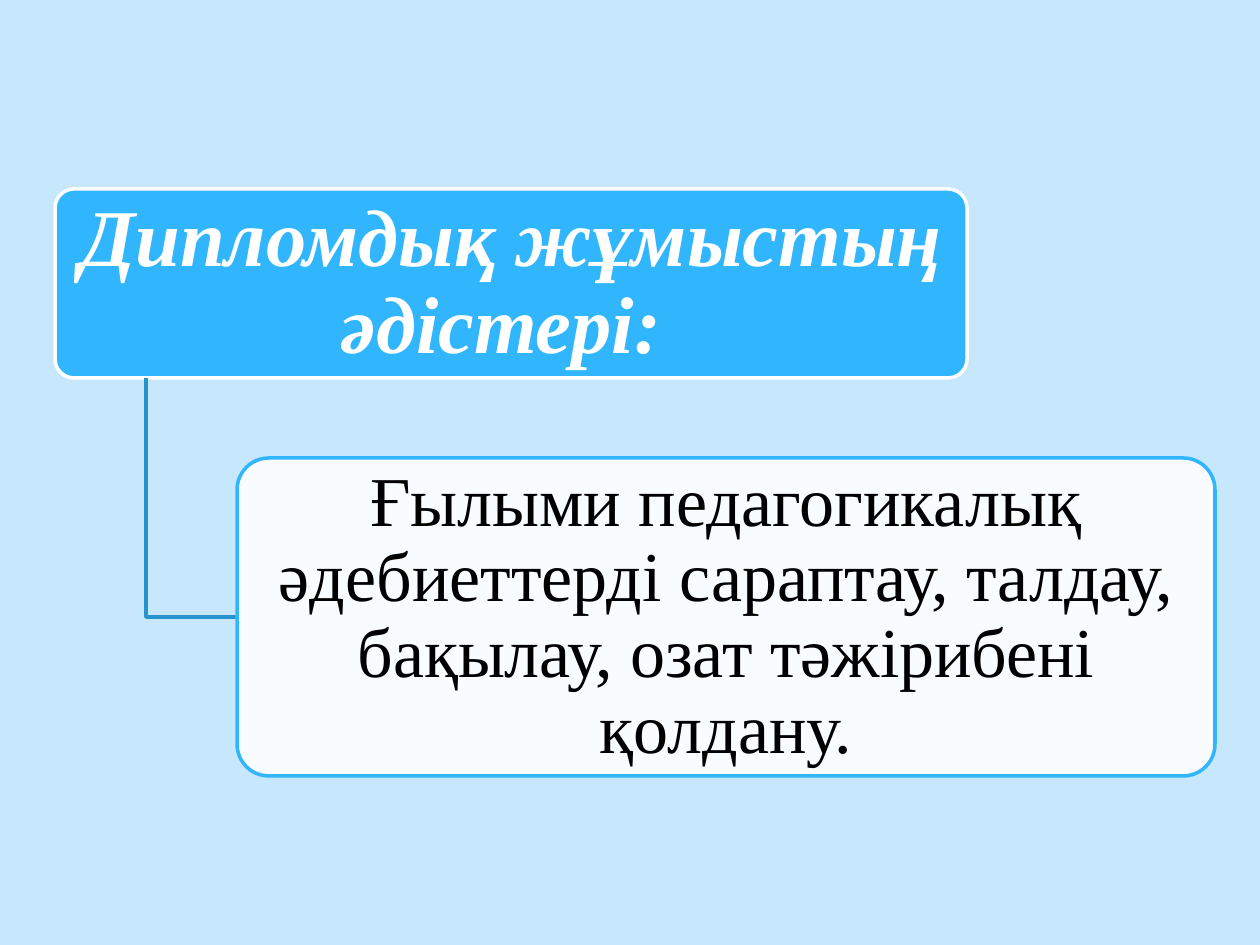
from lxml import etree
from pptx import Presentation
from pptx import util as u
from pptx.dml.color import RGBColor
from pptx.enum import shapes, text
from pptx.oxml.ns import qn

PX = 914400 / 126
SKY, BLUE, STEEL, WHITE, BLACK = "C6E7FC", "31B6FD", "2792CB", "FFFFFF", "000000"


def px(length):
    return u.Emu(round(length * PX))


def rgb(value):
    return RGBColor.from_string(value)


def set_line(shape, color):
    shape.line.color.rgb = rgb(color)
    shape.line.width = u.Pt(2)


def add_card(slide, left, top, width, height, fill, line, opacity=100):
    card = slide.shapes.add_shape(shapes.MSO_SHAPE.ROUNDED_RECTANGLE,
                                  px(left), px(top), px(width), px(height))
    card.adjustments[0] = 0.1
    card.shadow.inherit = False
    card.fill.solid()
    card.fill.fore_color.rgb = rgb(fill)
    if opacity < 100:
        color = card.fill._xPr.find(qn("a:solidFill"))[0]
        etree.SubElement(color, qn("a:alpha"), val=str(opacity * 1000))
    set_line(card, line)
    return card


def write(card, words, size, color, side, bold=False, italic=False):
    """Fill a card with centred text; side is the left and right inset."""
    frame = card.text_frame
    frame.word_wrap = True
    frame.vertical_anchor = text.MSO_ANCHOR.MIDDLE
    frame.margin_left = frame.margin_right = px(side)
    frame.margin_top = frame.margin_bottom = px(8)
    paragraph = frame.paragraphs[0]
    paragraph.alignment = text.PP_ALIGN.CENTER
    paragraph.line_spacing = 0.9
    run = paragraph.add_run()
    run.text = words
    font = run.font
    font.name, font.size = "Times New Roman", u.Pt(size)
    font.bold, font.italic = bold, italic
    font.color.rgb = rgb(color)


def add_branch(slide, points, color):
    """Draw an open bent line through the points."""
    builder = slide.shapes.build_freeform(*points[0], scale=PX)
    builder.add_line_segments(points[1:], close=False)
    branch = builder.convert_to_shape()
    branch.shadow.inherit = False
    branch.fill.background()
    set_line(branch, color)


def main():
    deck = Presentation()
    deck.slide_width, deck.slide_height = px(1260), px(945)
    slide = deck.slides.add_slide(deck.slide_layouts[6])
    slide.background.fill.solid()
    slide.background.fill.fore_color.rgb = rgb(SKY)

    heading = add_card(slide, 55, 189, 912, 189, BLUE, WHITE)
    write(heading, "Дипломдық жұмыстың әдістері: ", 46, WHITE, side=13,
          bold=True, italic=True)
    add_branch(slide, [(146, 378), (146, 617), (237, 617)], STEEL)
    methods = add_card(slide, 237, 458, 978, 318, WHITE, BLUE, opacity=90)
    write(methods, "Ғылыми педагогикалық әдебиеттерді сараптау, талдау, "
          "бақылау, озат тәжірибені қолдану.", 40, BLACK, side=10)
    deck.save("out.pptx")


if __name__ == "__main__":
    main()
